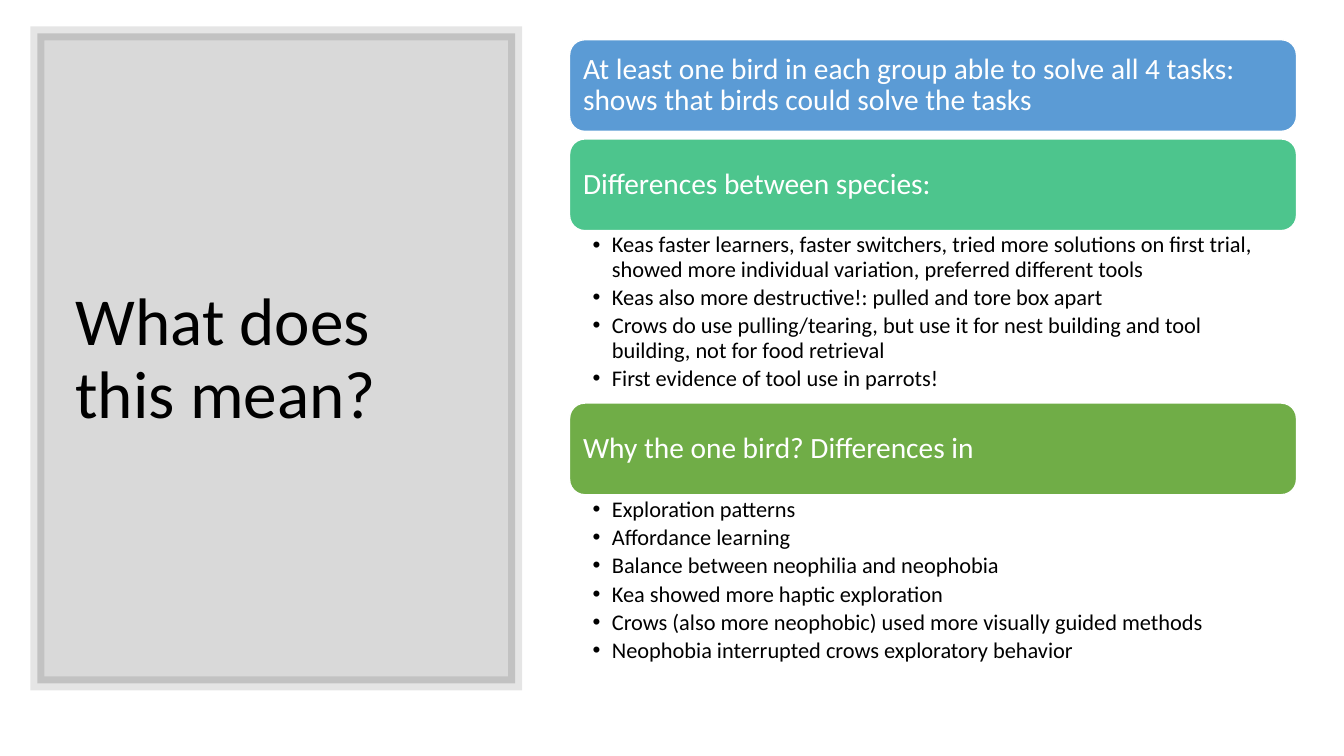
from dataclasses import dataclass

from lxml.etree import SubElement
from pptx import Presentation
from pptx.dml.color import RGBColor
from pptx.enum.shapes import MSO_SHAPE as Shape
from pptx.enum.text import MSO_ANCHOR as Anchor, PP_ALIGN as Align
from pptx.oxml.ns import qn
from pptx.util import Inches, Pt

WIDTH, HEIGHT = Inches(13.33), Inches(7.5)

# Stack on the right, in percent of the slide's size
STACK_LEFT, STACK_TOP, STACK_WIDTH = 42.38, 5.25, 54.09
HEADING_HEIGHT, GAP = 12.13, 1


@dataclass
class Box:
    """Place in percent of the slide's width and height."""
    left: float
    top: float
    width: float
    height: float

    def emu(self) -> list[int]:
        return [round(WIDTH * self.left / 100), round(HEIGHT * self.top / 100),
                round(WIDTH * self.width / 100), round(HEIGHT * self.height / 100)]


@dataclass
class TextStyle:
    size: float
    color: str
    anchor: Anchor
    insets: tuple[float, float, float, float]  # left, top, right, bottom
    space_after: float = 0
    bullet: bool = False


@dataclass
class Section:
    heading: str
    fill: str
    bullets: tuple[str, ...] = ()
    list_height: float = GAP


TITLE = TextStyle(48, "000000", Anchor.MIDDLE, (0.1, 0.05, 0.1, 0.05))
HEADING = TextStyle(21, "FFFFFF", Anchor.MIDDLE, (0.09, 0.09, 0.09, 0.09))
LIST = TextStyle(16, "000000", Anchor.TOP, (0.23, 0.03, 0.16, 0.03), 3, True)

SECTIONS = [
    Section("At least one bird in each group able to solve all 4 tasks: "
            "shows that birds could solve the tasks", "5B9BD5"),
    Section("Differences between species:", "4DC58D", (
        "Keas faster learners, faster switchers, tried more solutions on first trial, "
        "showed more individual variation, preferred different tools",
        "Keas also more destructive!: pulled and tore box apart",
        "Crows do use pulling/tearing, but use it for nest building and tool building, "
        "not for food retrieval",
        "First evidence of tool use in parrots!"), 22.8),
    Section("Why the one bird? Differences in", "70AD47", (
        "Exploration patterns",
        "Affordance learning",
        "Balance between neophilia and neophobia",
        "Kea showed more haptic exploration",
        "Crows (also more neophobic) used more visually guided methods",
        "Neophobia interrupted crows exploratory behavior"), 24.13),
]


def rgb(color: str) -> RGBColor:
    return RGBColor.from_string(color)


def set_alpha(fill, percent: int) -> None:
    color = fill._xPr.find(qn("a:solidFill"))[0]
    SubElement(color, qn("a:alpha")).set("val", str(percent * 1000))


def add_bullet(p) -> None:
    pPr = p._p.get_or_add_pPr()
    indent = Inches(0.19)
    pPr.set("marL", str(indent))
    pPr.set("indent", str(-indent))
    SubElement(pPr, qn("a:buFont")).set("typeface", "Arial")
    SubElement(pPr, qn("a:buChar")).set("char", "•")


def write(s, lines: tuple[str, ...], style: TextStyle) -> None:
    tf = s.text_frame
    left, top, right, bottom = map(Inches, style.insets)
    frame = dict(word_wrap=True, vertical_anchor=style.anchor, margin_left=left,
                 margin_top=top, margin_right=right, margin_bottom=bottom)
    for name, value in frame.items():
        setattr(tf, name, value)
    for i, line in enumerate(lines):
        p = tf.add_paragraph() if i else tf.paragraphs[0]
        layout = dict(alignment=Align.LEFT, line_spacing=0.9,
                      space_after=Pt(style.space_after))
        for name, value in layout.items():
            setattr(p, name, value)
        if style.bullet:
            add_bullet(p)
        r = p.add_run()
        r.text = line
        for name, value in dict(name="Calibri", size=Pt(style.size)).items():
            setattr(r.font, name, value)
        r.font.color.rgb = rgb(style.color)


def add_box(slide, kind: Shape, box: Box, fill: str, line: str, weight: float):
    s = slide.shapes.add_shape(kind, *box.emu())
    s.shadow.inherit = False
    s.fill.solid()
    s.fill.fore_color.rgb = rgb(fill)
    s.line.color.rgb = rgb(line)
    s.line.width = Pt(weight)
    return s


def add_text(slide, box: Box, lines: tuple[str, ...], style: TextStyle) -> None:
    write(slide.shapes.add_textbox(*box.emu()), lines, style)


def add_panel(slide) -> None:
    panel = add_box(slide, Shape.RECTANGLE, Box(2.78, 4.4, 35.56, 86),
                    "000000", "000000", 10)
    set_alpha(panel.fill, 15)
    set_alpha(panel.line.fill, 10)
    # Square corners on the frame
    SubElement(panel.line.fill._xPr, qn("a:miter")).set("lim", "800000")
    add_text(slide, Box(4.88, 9.33, 31.21, 76.67), ("What does this mean?",), TITLE)


def add_sections(slide) -> None:
    top = STACK_TOP
    for section in SECTIONS:
        box = Box(STACK_LEFT, top, STACK_WIDTH, HEADING_HEIGHT)
        s = add_box(slide, Shape.ROUNDED_RECTANGLE, box, section.fill, "FFFFFF", 1)
        write(s, (section.heading,), HEADING)
        top += HEADING_HEIGHT
        if section.bullets:
            box = Box(STACK_LEFT, top, STACK_WIDTH, section.list_height)
            add_text(slide, box, section.bullets, LIST)
        top += section.list_height


def main() -> None:
    prs = Presentation()
    prs.slide_width, prs.slide_height = WIDTH, HEIGHT
    slide = prs.slides.add_slide(prs.slide_layouts[6])
    add_panel(slide)
    add_sections(slide)
    prs.save("out.pptx")


if __name__ == "__main__":
    main()
